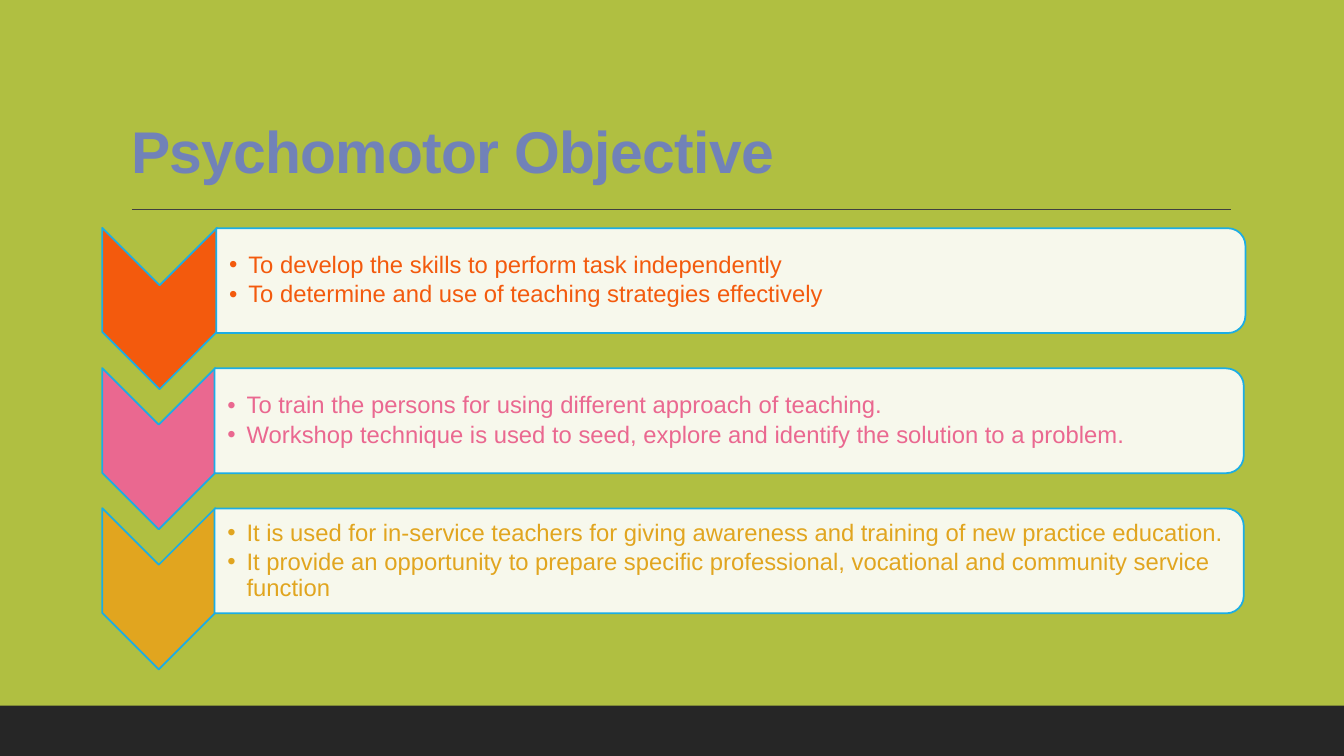
"""Build the Psychomotor Objective slide with three chevron rows."""
from lxml import etree
from pptx import Presentation
from pptx.dml.color import RGBColor
from pptx.enum import shapes as kinds, text as layout
from pptx.oxml import ns
from pptx.util import Pt

TITLE = "Psychomotor Objective"
ROWS = [
    ("F35A0D", 82, ["To develop the skills to perform task independently",
                    "To determine and use of teaching strategies effectively"]),
    ("EA6890", 80.8, ["To train the persons for using different approach of teaching.",
                      "Workshop technique is used to seed, explore and identify the solution to a problem."]),
    ("E1A51F", 80.8, ["It is used for in-service teachers for giving awareness and training of new practice education.",
                      "It provide an opportunity to prepare specific professional, vocational and community service function"]),
]
FONT = "Arial"
BACKGROUND, FOOTER, RULE, OUTLINE = "B0BF41", "262626", "404040", "1CADE4"
WIDTH, HEIGHT, FOOTER_HEIGHT = 960, 540, 36
ROW_CENTER, ROW_PITCH = 200.5, 100.1
CHEVRON_LENGTH, CHEVRON_LEFT, CHEVRON_DROP = 115.2, 73, 19.9
PANEL_LEFT, PANEL_LENGTH, PANEL_THICKNESS = 73, 735.1, 74.9
POINTS_WIDTH, POINTS_HEIGHT = 731.5, 67.7
INDENT, INSET = 13.7, 0.7


def color(value):
    return RGBColor.from_string(value)


def add_child(parent, tag, **attributes):
    return etree.SubElement(parent, ns.qn(tag), attributes)


def style_text(paragraph, size, value):
    paragraph.line_spacing = 0.9
    font = paragraph.runs[0].font
    font.name, font.size, font.color.rgb = FONT, Pt(size), color(value)
    return font


def add_block(kind, left, top, width, height, fill, line=None):
    block = slide.shapes.add_shape(kind, Pt(left), Pt(top), Pt(width), Pt(height))
    block.shadow.inherit = False
    block.fill.solid()
    block.fill.fore_color.rgb = color(fill)
    if line:
        block.line.color.rgb = color(line)
        block.line.width = Pt(1.25)
    else:
        block.line.fill.background()
    return block


def add_turned(kind, center_x, center_y, length, thickness, fill):
    block = add_block(kind, center_x - length / 2, center_y - thickness / 2,
                      length, thickness, fill, OUTLINE)
    block.rotation = 90
    return block


def add_points(left, center_y, points, value):
    box = slide.shapes.add_textbox(Pt(left), Pt(center_y - POINTS_HEIGHT / 2),
                                   Pt(POINTS_WIDTH), Pt(POINTS_HEIGHT))
    frame = box.text_frame
    frame.word_wrap = True
    frame.vertical_anchor = layout.MSO_ANCHOR.MIDDLE
    frame.margin_left = Pt(9.4)
    frame.margin_top = frame.margin_right = frame.margin_bottom = Pt(INSET)
    frame.text = "\n".join(points)
    for paragraph in frame.paragraphs:
        paragraph.level = 1
        paragraph.space_after = Pt(2.55)
        style_text(paragraph, 17, value)
        properties = paragraph._p.get_or_add_pPr()
        properties.set("marL", str(Pt(INDENT)))
        properties.set("indent", str(-Pt(INDENT)))
        add_child(properties, "a:buFont", typeface=FONT)
        add_child(properties, "a:buChar", char="•")


deck = Presentation()
deck.slide_width, deck.slide_height = Pt(WIDTH), Pt(HEIGHT)
slide = deck.slides.add_slide(deck.slide_layouts[5])
slide.background.fill.solid()
slide.background.fill.fore_color.rgb = color(BACKGROUND)

add_block(kinds.MSO_SHAPE.RECTANGLE, 0, HEIGHT - FOOTER_HEIGHT, WIDTH, FOOTER_HEIGHT, FOOTER)
rule = slide.shapes.add_connector(kinds.MSO_CONNECTOR.STRAIGHT, Pt(94.3), Pt(149.6), Pt(879), Pt(149.6))
rule.line.color.rgb = color(RULE)
rule.line.width = Pt(1)
add_child(rule._element.spPr, "a:effectLst")

title = slide.shapes.title
title.left, title.top, title.width, title.height = Pt(86.4), Pt(22.3), Pt(792), Pt(114.5)
title.text_frame.text = TITLE
title.text_frame.vertical_anchor = layout.MSO_ANCHOR.BOTTOM
heading = title.text_frame.paragraphs[0]
heading.alignment = layout.PP_ALIGN.LEFT
style_text(heading, 42, "7182B8").bold = True
heading.runs[0]._r.get_or_add_rPr().set("spc", "-50")

for index, (accent, chevron_width, points) in enumerate(ROWS):
    center = ROW_CENTER + index * ROW_PITCH
    panel_left = CHEVRON_LEFT + chevron_width
    add_turned(kinds.MSO_SHAPE.CHEVRON, CHEVRON_LEFT + chevron_width / 2, center + CHEVRON_DROP,
               CHEVRON_LENGTH, chevron_width, accent)
    panel = add_turned(kinds.MSO_SHAPE.ROUND_2_SAME_RECTANGLE, panel_left + PANEL_LENGTH / 2 - 0.5,
                       center, PANEL_THICKNESS, PANEL_LENGTH, "FFFFFF")
    white = panel._element.spPr.find(".//" + ns.qn("a:srgbClr"))
    add_child(white, "a:alpha", val="90000")
    add_points(panel_left - 0.7, center, points, accent)

deck.save("out.pptx")
